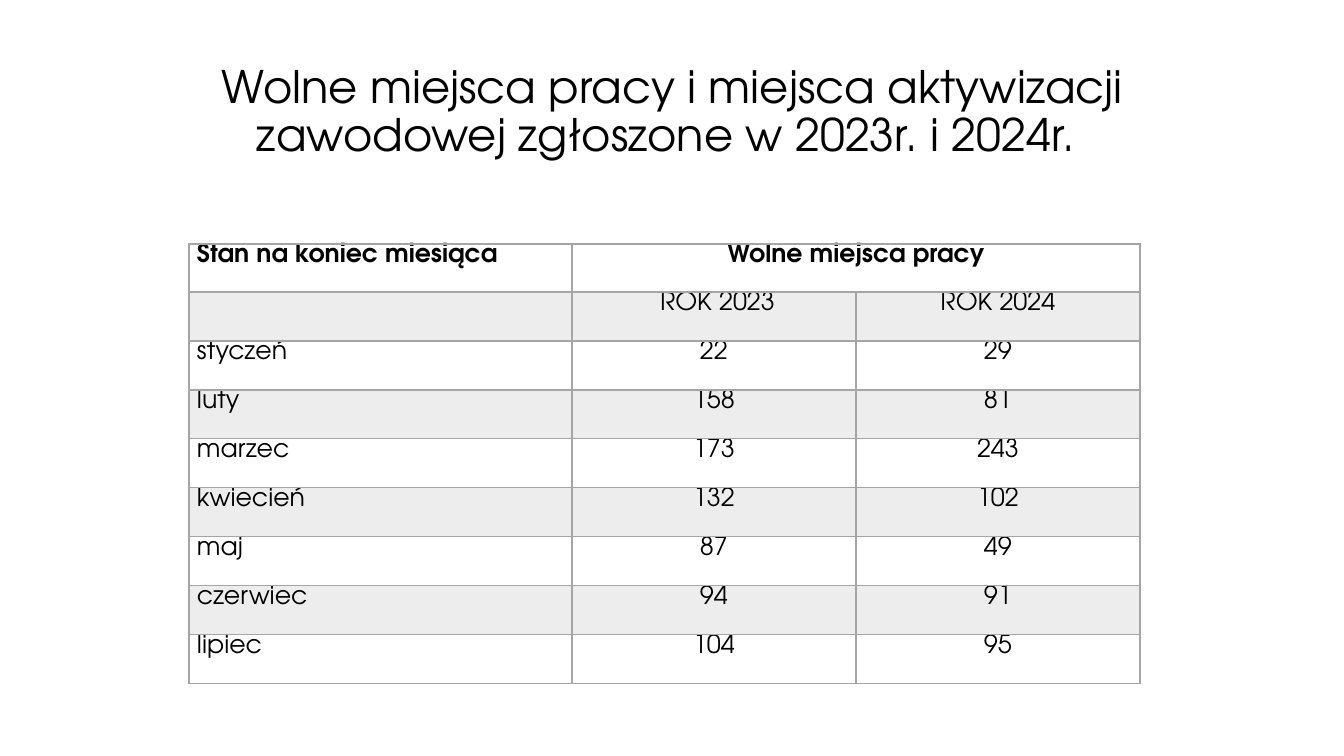
from lxml.etree import SubElement
from pptx import Presentation
from pptx.dml.color import RGBColor
from pptx.enum.text import MSO_ANCHOR, PP_ALIGN
from pptx.oxml.ns import qn
from pptx.util import Pt

HEX = {"ink": "000000", "grey": "A5A5A5"}
TITLE = "Wolne miejsca pracy i miejsca aktywizacji zawodowej zgłoszone w 2023r. i 2024r. "
ROWS = [
    ("Stan na koniec miesiąca", "Wolne miejsca pracy", ""),
    ("", " ROK 2023", "ROK 2024"),
    ("styczeń", "22", "29"),
    ("luty", "158", "81"),
    ("marzec", "173", "243"),
    ("kwiecień", "132", "102"),
    ("maj", "87", "49"),
    ("czerwiec", "94", "91"),
    ("lipiec", "104", "95"),
]


def px(size):
    return round(size * 914400 / 100.8)


class Page:
    face = "TeX Gyre Adventor"

    def __init__(self, deck):
        self.slide = deck.slides.add_slide(deck.slide_layouts[5])

    def style(self, para, size, bold, align):
        para.alignment = align
        for font in [para.font] + [run.font for run in para.runs]:
            font.name = self.face
            font.size = Pt(size)
            font.bold = bold
            font.color.rgb = RGBColor.from_string(HEX["ink"])

    def title(self, text, left, top, width, height):
        box = self.slide.shapes.title
        box.left, box.top, box.width, box.height = map(px, (left, top, width, height))
        frame = box.text_frame
        frame.text = text
        frame.word_wrap = True
        frame.vertical_anchor = MSO_ANCHOR.MIDDLE
        para = frame.paragraphs[0]
        para.line_spacing = 0.9
        self.style(para, 32, False, PP_ALIGN.CENTER)

    def edge(self, cell, side, width):
        line = SubElement(cell._tc.get_or_add_tcPr(), qn("a:ln" + side), w=str(Pt(width)))
        fill = SubElement(line, qn("a:solidFill"))
        SubElement(fill, qn("a:srgbClr"), val=HEX["grey"])

    def shade(self, cell, band):
        if not band:
            cell.fill.background()
            return
        cell.fill.solid()
        cell.fill.fore_color.rgb = RGBColor.from_string(HEX["grey"])
        tint = cell._tc.tcPr.find(qn("a:solidFill")).find(qn("a:srgbClr"))
        SubElement(tint, qn("a:alpha"), val="20000")

    def table(self, rows, left, top, widths, heights):
        area = map(px, (left, top, sum(widths), sum(heights)))
        grid = self.slide.shapes.add_table(len(rows), len(widths), *area).table
        grid.first_row = grid.horz_banding = False
        for col, width in zip(grid.columns, widths):
            col.width = px(width)
        for row, height in zip(grid.rows, heights):
            row.height = px(height)
        grid.cell(0, 1).merge(grid.cell(0, 2))
        for r, row in enumerate(rows):
            for c, text in enumerate(row):
                cell = grid.cell(r, c)
                cell.text = text
                cell.margin_left = cell.margin_right = px(8)
                cell.margin_top = cell.margin_bottom = 0
                align = PP_ALIGN.CENTER if c else PP_ALIGN.LEFT
                self.style(cell.text_frame.paragraphs[0], 18, r == 0, align)
                for side in "LRTB":
                    thick = (r, side) in ((0, "B"), (1, "T"))
                    self.edge(cell, side, 2 if thick else 1)
                self.shade(cell, r % 2)


def main():
    deck = Presentation()
    deck.slide_width, deck.slide_height = px(1344), px(756)
    page = Page(deck)
    page.title(TITLE, 93, 40, 1159, 146)
    page.table(ROWS, 189, 244, [383, 284, 284], [48] + [49] * 8)
    deck.save("out.pptx")


if __name__ == "__main__":
    main()
